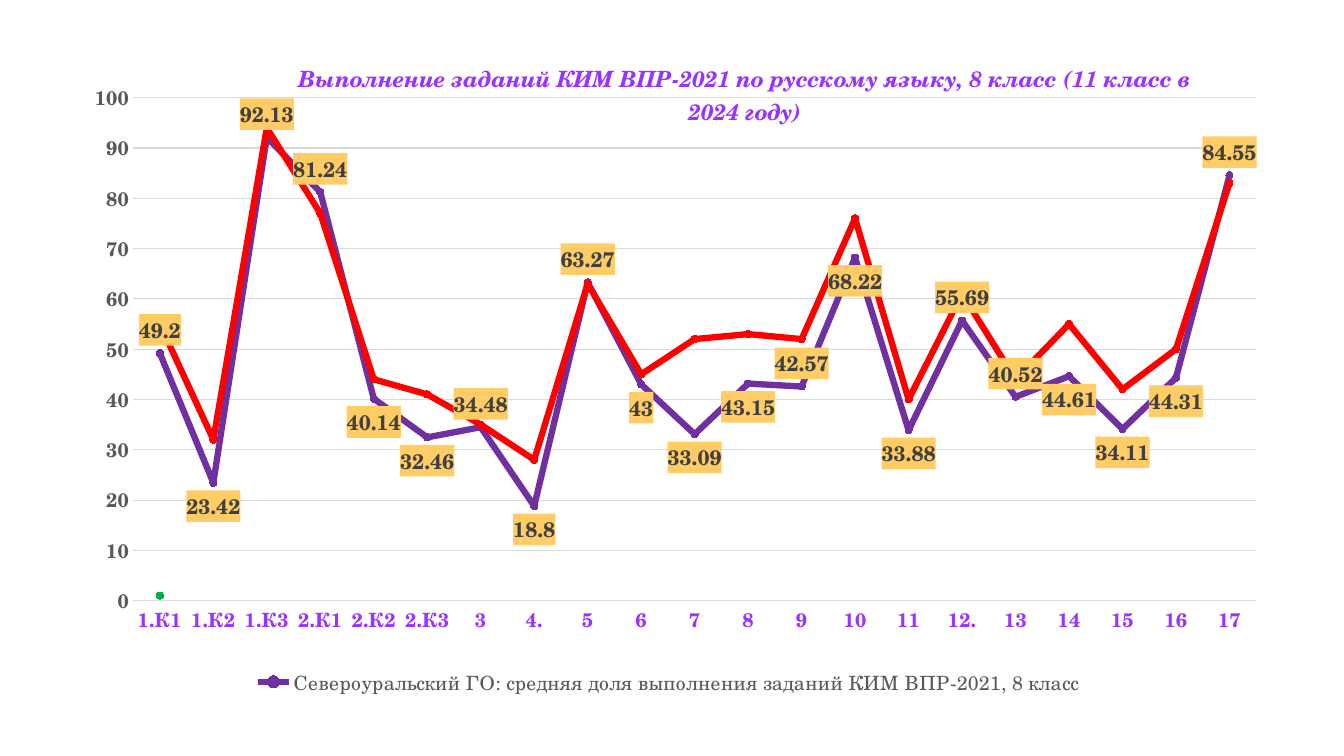
from dataclasses import dataclass

from lxml import etree
from pptx import Presentation
from pptx.chart.data import CategoryChartData
from pptx.dml.color import RGBColor
from pptx.enum import chart as ch
from pptx.oxml import parse_xml
from pptx.oxml.ns import nsdecls, qn
from pptx.util import Inches, Pt

TITLE = "Выполнение заданий КИМ ВПР-2021 по русскому языку, 8 класс (11 класс в 2024 году)"
TASKS = ["1.К1", "1.К2", "1.К3", "2.К1", "2.К2", "2.К3", "3", "4.", "5", "6", "7",
         "8", "9", "10", "11", "12.", "13", "14", "15", "16", "17"]
SERIES = [
    ("Североуральский ГО: средняя доля выполнения заданий КИМ ВПР-2021, 8 класс",
     [49.2, 23.42, 92.13, 81.24, 40.14, 32.46, 34.48, 18.8, 63.27, 43, 33.09,
      43.15, 42.57, 68.22, 33.88, 55.69, 40.52, 44.61, 34.11, 44.31, 84.55],
     "7030A0", 4.5),
    ("Series 2",
     [55, 32, 94, 77, 44, 41, 35, 28, 63, 45, 52,
      53, 52, 76, 40, 61, 44, 55, 42, 50, 83],
     "FF0000", 4.5),
    ("Series 3", [1], "00B050", 3.5),
]
LABELS_BELOW = [1, 4, 5, 7, 9, 10, 11, 13, 14, 17, 18, 19]
HIDDEN_IN_LEGEND = [1, 2]
CHART_AT = (0.82, 0.46, 11.75, 6.65)
TITLE_AT = (2.1, 0.09)
PLOT_AT = (0.5, 0.51, 11.14, 4.99)
LEGEND_AT = (1.58, 6.14, 8.46, 0.33)


@dataclass(frozen=True)
class Theme:
    font: str = "TeX Gyre Schola"
    base_font: str = "Calibri"
    accent: str = "9933FF"
    text: str = "595959"
    label: str = "404040"
    label_fill: str = "FFCC66"
    grid: str = "D9D9D9"
    title_size: float = 16
    label_size: float = 15
    axis_size: float = 14
    base_size: float = 10


THEME = Theme()


def style_font(font, size, color, bold=False, italic=False):
    font.name, font.size = THEME.font, Pt(size)
    font.bold, font.italic = bold, italic
    font.color.rgb = RGBColor.from_string(color)


def style_line(line, color, width):
    line.color.rgb = RGBColor.from_string(color)
    line.width = Pt(width)


def make_layout(parent, at, inner=False):
    for old in parent.findall(qn("c:layout")):
        parent.remove(old)
    layout = parse_xml(f"<c:layout {nsdecls('c')}><c:manualLayout/></c:layout>")
    width, height = CHART_AT[2:]
    settings = [("layoutTarget", "inner")] if inner else []
    settings += [("xMode", "edge"), ("yMode", "edge")]
    settings += [(tag, length / whole) for tag, length, whole
                 in zip("xywh", at, (width, height, width, height))]
    for tag, value in settings:
        etree.SubElement(layout[0], qn(f"c:{tag}")).set("val", str(value))
    return layout


def add_title(chart):
    chart.has_title = True
    tf = chart.chart_title.text_frame
    tf.text = TITLE
    style_font(tf.paragraphs[0].runs[0].font, THEME.title_size, THEME.accent, True, True)
    title = chart._chartSpace.find(".//" + qn("c:title"))
    title.find(qn("c:tx")).addnext(make_layout(title, TITLE_AT))


def style_axes(chart):
    for axis, color in ((chart.category_axis, THEME.accent), (chart.value_axis, THEME.text)):
        axis.major_tick_mark = axis.minor_tick_mark = ch.XL_TICK_MARK.NONE
        style_font(axis.tick_labels.font, THEME.axis_size, color, True)
    style_line(chart.category_axis.format.line, THEME.grid, 0.75)
    value_axis = chart.value_axis
    value_axis.minimum_scale, value_axis.maximum_scale, value_axis.major_unit = 0, 100, 10
    value_axis.format.line.fill.background()
    value_axis.has_major_gridlines = True
    style_line(value_axis.major_gridlines.format.line, THEME.grid, 0.75)


def style_series(plot):
    for ser, (_, _, color, width) in zip(plot.series, SERIES):
        ser.smooth = False
        style_line(ser.format.line, color, width)
        marker = ser.marker
        marker.style, marker.size = ch.XL_MARKER_STYLE.CIRCLE, 5
        marker.format.fill.solid()
        marker.format.fill.fore_color.rgb = RGBColor.from_string(color)
        style_line(marker.format.line, color, 0.75)


def add_labels(ser):
    labels = ser.data_labels
    labels.show_value = True
    labels.position = ch.XL_LABEL_POSITION.ABOVE
    style_font(labels.font, THEME.label_size, THEME.label, True)
    for i in LABELS_BELOW:
        label = ser.points[i].data_label
        style_font(label.font, THEME.label_size, THEME.label, True)
        label.position = ch.XL_LABEL_POSITION.BELOW
    for text_props in ser._element.findall(".//" + qn("c:txPr")):
        text_props.addprevious(parse_xml(
            f"<c:spPr {nsdecls('c', 'a')}><a:solidFill>"
            f'<a:srgbClr val="{THEME.label_fill}"/></a:solidFill></c:spPr>'))


def add_legend(chart):
    chart.has_legend = True
    chart.legend.position = ch.XL_LEGEND_POSITION.BOTTOM
    chart.legend.include_in_layout = False
    style_font(chart.legend.font, THEME.axis_size, THEME.text)
    legend = chart.legend._element
    place = legend.find(qn("c:legendPos"))
    place.addnext(make_layout(legend, LEGEND_AT))
    for i in reversed(HIDDEN_IN_LEGEND):
        place.addnext(parse_xml(
            f"<c:legendEntry {nsdecls('c')}>"
            f'<c:idx val="{i}"/><c:delete val="1"/></c:legendEntry>'))


def main():
    prs = Presentation()
    prs.slide_width, prs.slide_height = Inches(13.33), Inches(7.5)
    s = prs.slides.add_slide(prs.slide_layouts[6])
    data = CategoryChartData()
    data.categories = TASKS
    for name, values, _, _ in SERIES:
        data.add_series(name, values)
    chart = s.shapes.add_chart(ch.XL_CHART_TYPE.LINE_MARKERS,
                               *map(Inches, CHART_AT), data).chart
    chart.font.name, chart.font.size = THEME.base_font, Pt(THEME.base_size)
    add_title(chart)
    style_axes(chart)
    plot = chart.plots[0]
    plot.vary_by_categories = False
    style_series(plot)
    add_labels(plot.series[0])
    add_legend(chart)
    area = chart._chartSpace.find(".//" + qn("c:plotArea"))
    area.insert(0, make_layout(area, PLOT_AT, True))
    prs.save("out.pptx")


if __name__ == "__main__":
    main()
